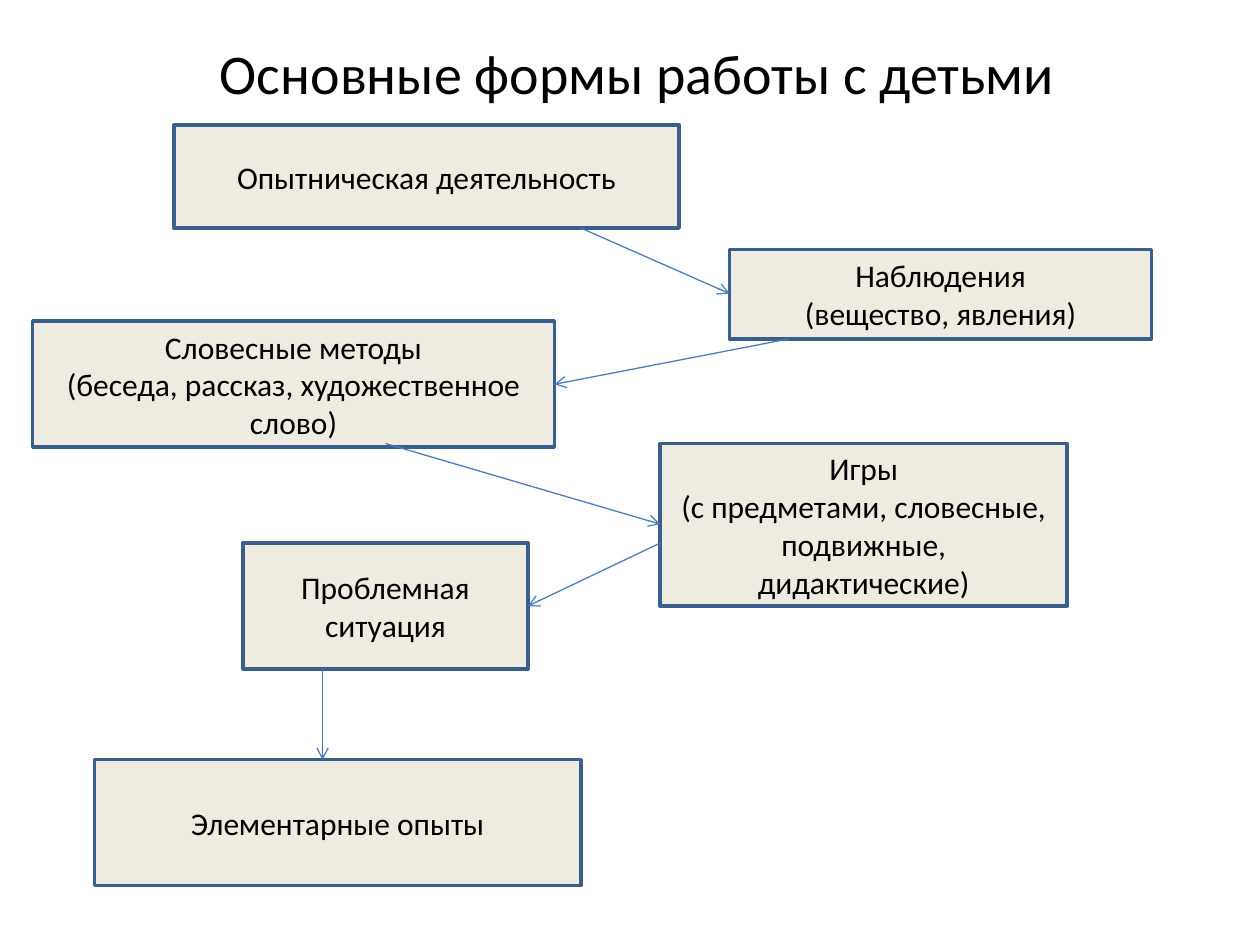
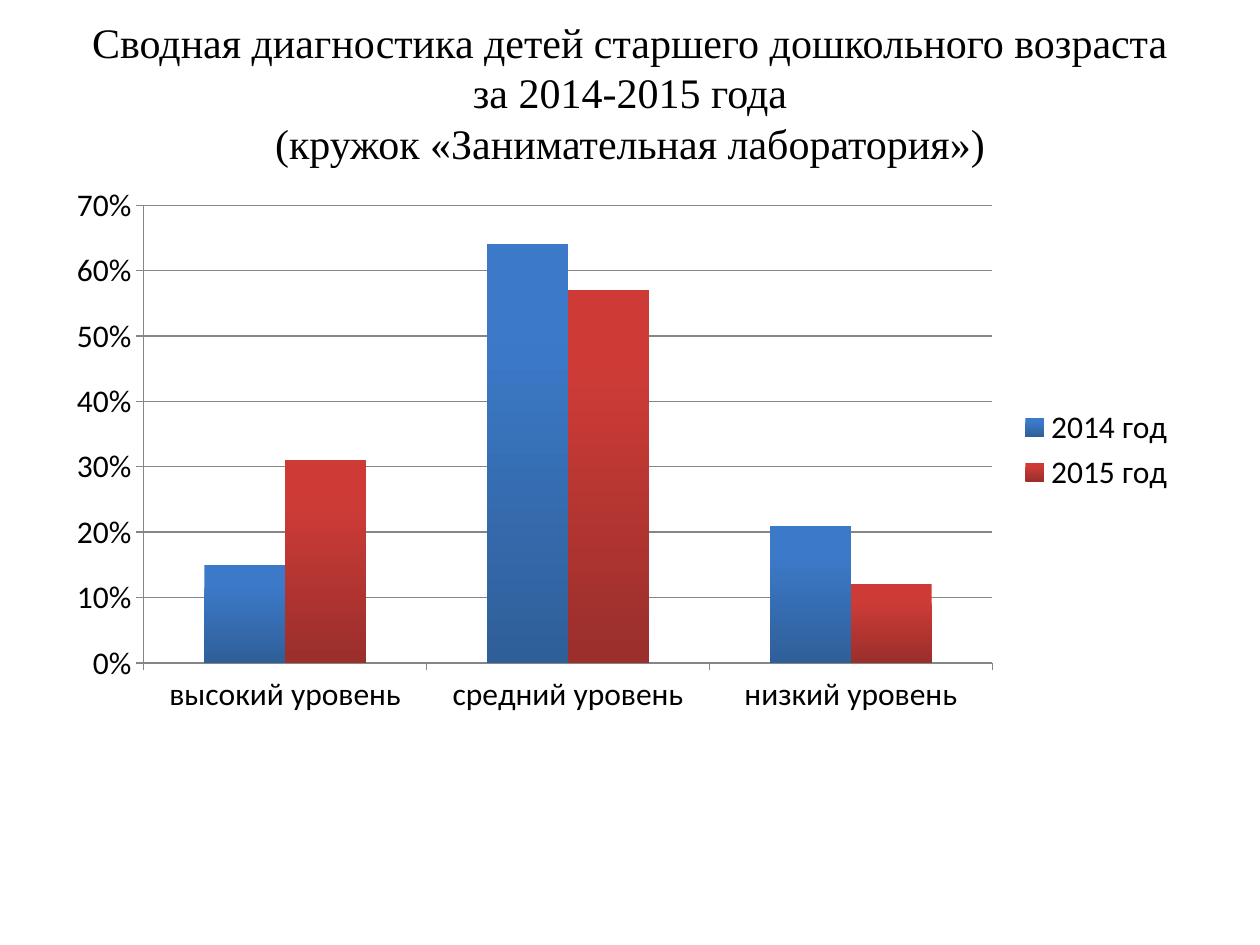
from dataclasses import dataclass
from typing import NamedTuple

from lxml import etree
from pptx import Presentation
from pptx import util as u
from pptx.chart.data import CategoryChartData
from pptx.dml.color import RGBColor
from pptx.enum import chart as ch
from pptx.enum import shapes, text
from pptx.oxml import ns


@dataclass(frozen=True)
class Theme:
    ink: RGBColor = RGBColor.from_string("000000")
    box_fill: RGBColor = RGBColor.from_string("EEECE1")
    box_line: RGBColor = RGBColor.from_string("3A5F8C")
    arrow: RGBColor = RGBColor.from_string("4B7EBC")
    grid: RGBColor = RGBColor.from_string("868686")
    body_font: str = "Calibri"
    report_font: str = "Times New Roman"
    heading: u.Pt = u.Pt(32)
    report_heading: u.Pt = u.Pt(24)
    body: u.Pt = u.Pt(18)


THEME = Theme()


class Area(NamedTuple):
    left: float
    top: float
    width: float
    height: float

    def lengths(self) -> list[u.Inches]:
        return [u.Inches(side) for side in self]


class WorkForm(NamedTuple):
    area: Area
    lines: tuple[str, ...]


class Arrow(NamedTuple):
    start: tuple[float, float]
    end: tuple[float, float]


class YearResult(NamedTuple):
    name: str
    shares: tuple[float, ...]
    top_colour: str
    bottom_colour: str


WORK_FORMS = (
    WorkForm(Area(1.38, 0.99, 4.01, 0.82), ("Опытническая деятельность",)),
    WorkForm(Area(5.79, 1.98, 3.35, 0.71), ("Наблюдения", "(вещество, явления)")),
    WorkForm(Area(0.26, 2.55, 4.14, 1), ("Словесные методы", "(беседа, рассказ, художественное слово)")),
    WorkForm(Area(5.24, 3.52, 3.23, 1.29), ("Игры", "(с предметами, словесные, подвижные, дидактические)")),
    WorkForm(Area(1.93, 4.31, 2.26, 1), ("Проблемная ситуация",)),
    WorkForm(Area(0.75, 6.03, 3.86, 1), ("Элементарные опыты",)),
)
ARROWS = (
    Arrow((4.61, 1.81), (5.79, 2.33)),
    Arrow((6.26, 2.69), (4.4, 3.05)),
    Arrow((3.06, 3.52), (5.24, 4.16)),
    Arrow((5.24, 4.31), (4.19, 4.81)),
    Arrow((2.56, 5.31), (2.56, 6.03)),
)
LEVELS = ("высокий уровень", "средний уровень", "низкий уровень")
RESULTS = (
    YearResult("2014 год", (0.15, 0.64, 0.21), "3C7AC9", "2F5F98"),
    YearResult("2015 год", (0.31, 0.57, 0.12), "CE3B37", "9A2F2C"),
)


def style_font(font, size: u.Pt, name: str = THEME.body_font) -> None:
    font.size, font.name = size, name
    font.color.rgb = THEME.ink


def add_titled_slide(deck, title: str, area: Area, size: u.Pt, font_name: str):
    slide = deck.slides.add_slide(deck.slide_layouts[5])
    heading = slide.shapes.title
    heading.left, heading.top, heading.width, heading.height = area.lengths()
    frame = heading.text_frame
    frame.text = title
    frame.vertical_anchor = text.MSO_ANCHOR.MIDDLE
    frame.paragraphs[0].alignment = text.PP_ALIGN.CENTER
    style_font(frame.paragraphs[0].font, size, font_name)
    return slide


def add_work_form(slide, form: WorkForm) -> None:
    box = slide.shapes.add_shape(shapes.MSO_SHAPE.RECTANGLE, *form.area.lengths())
    box.shadow.inherit = False
    box.fill.solid()
    box.fill.fore_color.rgb = THEME.box_fill
    box.line.color.rgb = THEME.box_line
    box.line.width = u.Pt(2)
    frame = box.text_frame
    frame.word_wrap = True
    frame.vertical_anchor = text.MSO_ANCHOR.MIDDLE
    frame.text = "\n".join(form.lines)
    for paragraph in frame.paragraphs:
        paragraph.alignment = text.PP_ALIGN.CENTER
        style_font(paragraph.font, THEME.body)


def add_arrow(slide, arrow: Arrow) -> None:
    ends = [u.Inches(value) for value in arrow.start + arrow.end]
    connector = slide.shapes.add_connector(shapes.MSO_CONNECTOR.STRAIGHT, *ends)
    connector.line.color.rgb = THEME.arrow
    connector.line.width = u.Pt(0.75)
    properties = connector._element.spPr
    outline = properties.find(ns.qn("a:ln"))
    etree.SubElement(outline, ns.qn("a:tailEnd"), type="arrow")
    etree.SubElement(properties, ns.qn("a:effectLst"))


def add_results_chart(slide, area: Area) -> None:
    data = CategoryChartData(number_format="0%")
    data.categories = LEVELS
    for result in RESULTS:
        data.add_series(result.name, result.shares)
    chart = slide.shapes.add_chart(
        ch.XL_CHART_TYPE.COLUMN_CLUSTERED, *area.lengths(), data).chart
    chart.has_title = False
    style_font(chart.font, THEME.body)
    chart.has_legend = True
    chart.legend.position = ch.XL_LEGEND_POSITION.RIGHT
    chart.legend.include_in_layout = False

    plot = chart.plots[0]
    plot.gap_width, plot.overlap = 150, 0
    plot.vary_by_categories = False
    for series, result in zip(plot.series, RESULTS):
        fill = series.format.fill
        fill.gradient()
        fill.gradient_angle = 270
        for stop, colour, position in zip(
                fill.gradient_stops, (result.top_colour, result.bottom_colour), (0.2, 1)):
            stop.color.rgb = RGBColor.from_string(colour)
            stop.position = position

    shares = chart.value_axis
    shares.minimum_scale, shares.maximum_scale, shares.major_unit = 0, 0.7, 0.1
    shares.has_major_gridlines = True
    shares.tick_labels.number_format = "0%"
    shares.tick_labels.number_format_is_linked = False
    for axis in (shares, chart.category_axis):
        axis.major_tick_mark = ch.XL_TICK_MARK.OUTSIDE
    for rule in (shares, shares.major_gridlines, chart.category_axis):
        rule.format.line.color.rgb = THEME.grid
        rule.format.line.width = u.Pt(0.75)


def main() -> None:
    deck = Presentation()
    deck.slide_width, deck.slide_height = u.Inches(10), u.Inches(7.5)

    forms = add_titled_slide(deck, "Основные формы работы с детьми",
                             Area(0.56, 0.21, 9, 0.72), THEME.heading, THEME.body_font)
    for form in WORK_FORMS:
        add_work_form(forms, form)
    for arrow in ARROWS:
        add_arrow(forms, arrow)

    diagnostics = add_titled_slide(
        deck,
        "Сводная диагностика детей старшего дошкольного возраста\v"
        "за 2014-2015 года\v(кружок «Занимательная лаборатория»)",
        Area(0.5, 0.13, 9, 1.2), THEME.report_heading, THEME.report_font)
    add_results_chart(diagnostics, Area(0.43, 1.39, 9, 4.36))

    deck.save("out.pptx")


if __name__ == "__main__":
    main()
